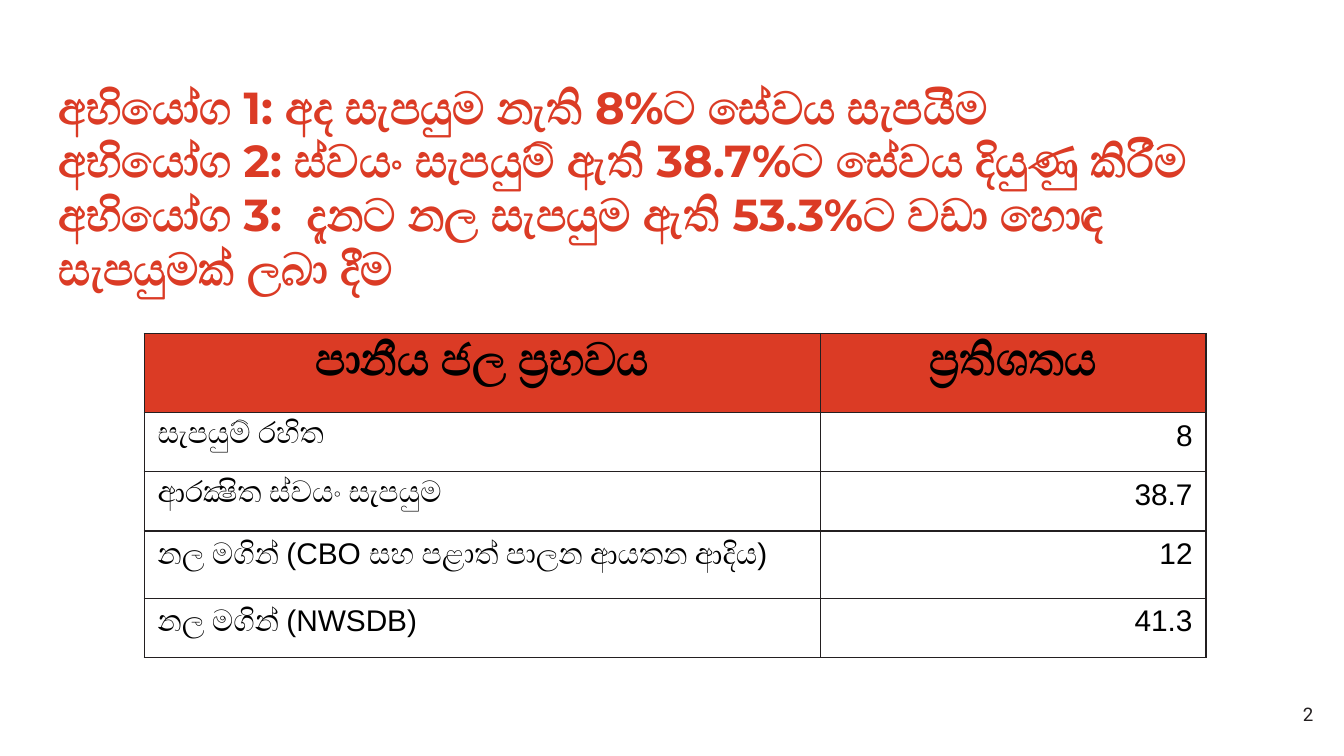
from lxml import etree
from pptx import Presentation
from pptx.dml.color import RGBColor
from pptx.enum.text import MSO_ANCHOR, PP_ALIGN
from pptx.oxml.ns import qn
from pptx.util import Pt

RED = RGBColor(0xDB, 0x3B, 0x25)
INK = RGBColor(0x23, 0x1F, 0x20)
BLACK = RGBColor(0, 0, 0)
LEFT, CENTER, RIGHT = PP_ALIGN.LEFT, PP_ALIGN.CENTER, PP_ALIGN.RIGHT
TOP, MIDDLE = MSO_ANCHOR.TOP, MSO_ANCHOR.MIDDLE

SPLIT, JOIN = chr(0x200C), chr(0x200D)
SELF = f"ස්{SPLIT}වයං"
GOALS = [
    "අභියෝග 1: අද සැපයුම නැති 8%ට සේවය සැපයීම",
    f"අභියෝග 2: {SELF} සැපයුම් ඇති 38.7%ට සේවය දියුණු කිරීම",
    "අභියෝග 3:  දැනට නල සැපයුම ඇති 53.3%ට වඩා හොඳ සැපයුමක් ලබා දීම",
]
ROWS = [
    (f"පානීය ජල ප්{JOIN}රභවය", f"ප්{JOIN}රතිශතය"),
    ("සැපයුම් රහිත", "8"),
    (f"ආරක්{JOIN}ෂිත {SELF} සැපයුම", "38.7"),
    ("නල මගින් (CBO සහ පළාත් පාලන ආයතන ආදිය)", "12"),
    ("නල මගින් (NWSDB)", "41.3"),
]
WIDTHS = [362.2, 206.6]
HEIGHTS = [42.5, 31.7, 31.7, 36, 31.7]


def style(para, face, size, color, bold=False, align=LEFT):
    """Set the font and alignment of a paragraph."""
    para.alignment = align
    font = para.font
    font.name, font.size, font.bold = face, Pt(size), bold
    font.color.rgb = color


def add_text(slide, box, lines, anchor=TOP):
    """Add a wrapped text box and return its paragraph."""
    frame = slide.shapes.add_textbox(*map(Pt, box)).text_frame
    frame.word_wrap = True
    frame.vertical_anchor = anchor
    frame.margin_left = frame.margin_right = Pt(7.2)
    frame.margin_top = frame.margin_bottom = Pt(7.2)
    para = frame.paragraphs[0]
    for i, line in enumerate(lines):
        if i:
            para.add_line_break()
        para.add_run().text = line
    return para


def add_title(slide, box):
    """Place the three challenges as the title."""
    style(add_text(slide, box, GOALS), "Montserrat", 24, RED, True)


def add_number(slide, box):
    """Place the slide number."""
    style(add_text(slide, box, ["2"], MIDDLE), "Roboto", 10, INK, align=RIGHT)


def add_border(cell):
    """Draw a thin dark line on every side of a cell."""
    props = cell._tc.get_or_add_tcPr()
    for side in ("a:lnL", "a:lnR", "a:lnT", "a:lnB"):
        line = etree.SubElement(props, qn(side), w=str(Pt(0.75)))
        fill = etree.SubElement(line, qn("a:solidFill"))
        etree.SubElement(fill, qn("a:srgbClr"), val=str(INK))


def add_source_table(slide, box):
    """Place the table of water sources and their shares."""
    table = slide.shapes.add_table(len(ROWS), len(WIDTHS), *map(Pt, box)).table
    table.first_row = table.horz_banding = False
    for col, width in zip(table.columns, WIDTHS):
        col.width = Pt(width)
    for row, height in zip(table.rows, HEIGHTS):
        row.height = Pt(height)
    for r, texts in enumerate(ROWS):
        head = r == 0
        for c, text in enumerate(texts):
            cell = table.cell(r, c)
            add_border(cell)
            if head:
                cell.fill.solid()
                cell.fill.fore_color.rgb = RED
            else:
                cell.fill.background()
            cell.text = text
            align = CENTER if head else (LEFT, RIGHT)[c]
            para = cell.text_frame.paragraphs[0]
            style(para, "Arial", 24 if head else 16, BLACK, head, align)


def main():
    """Build and save the slide."""
    deck = Presentation()
    deck.slide_width, deck.slide_height = Pt(720), Pt(405)
    slide = deck.slides.add_slide(deck.slide_layouts[6])
    add_title(slide, (24.5, 35.3, 671, 45.4))
    add_number(slide, (667.4, 367.2, 43.2, 31))
    add_source_table(slide, (77.3, 178.6, sum(WIDTHS), sum(HEIGHTS)))
    deck.save("out.pptx")


if __name__ == "__main__":
    main()
